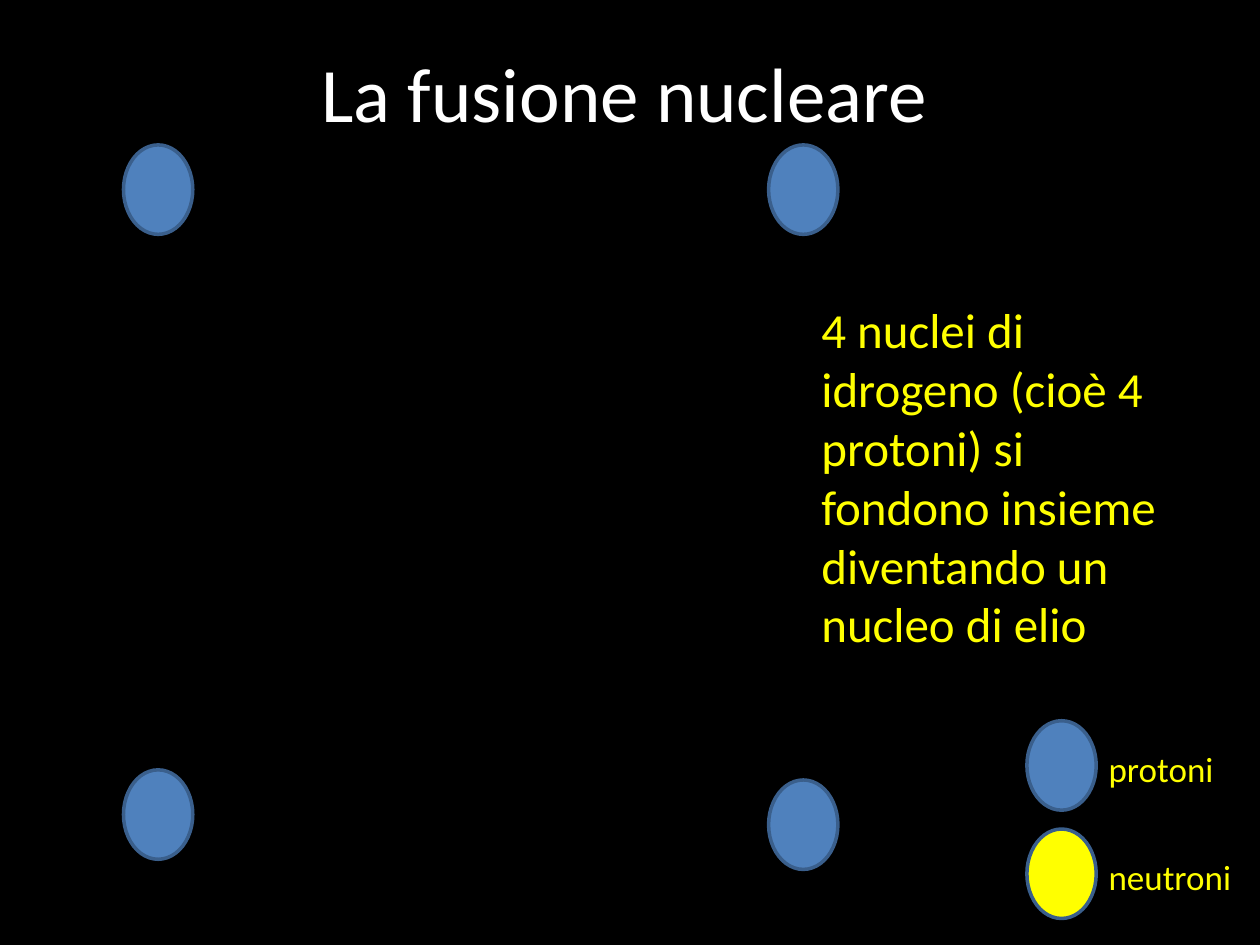
from pptx import Presentation
from pptx.dml.color import RGBColor
from pptx.enum.shapes import MSO_SHAPE
from pptx.enum.text import MSO_ANCHOR, PP_ALIGN
from pptx.util import Inches, Pt

COLORS = {
    "background": "000000",
    "title": "FFFFFF",
    "text": "FFFF00",
    "proton": "4F81BD",
    "neutron": "FFFF00",
    "outline": "3A5F8C",
}

prs = Presentation()
prs.slide_width, prs.slide_height = Inches(10), Inches(7.5)
s = prs.slides.add_slide(prs.slide_layouts[6])
s.background.fill.solid()
s.background.fill.fore_color.rgb = RGBColor.from_string(COLORS["background"])


def add_text(text, left, top, width, height, size, color="text"):
    """Add a one-run text box and return its text frame."""
    tf = s.shapes.add_textbox(
        Inches(left), Inches(top), Inches(width), Inches(height)).text_frame
    tf.word_wrap = True
    r = tf.paragraphs[0].add_run()
    r.text = text
    r.font.name = "Calibri"
    r.font.size = Pt(size)
    r.font.color.rgb = RGBColor.from_string(COLORS[color])
    return tf


def add_particle(kind, left, top):
    sp = s.shapes.add_shape(
        MSO_SHAPE.OVAL, Inches(left), Inches(top), Inches(0.55), Inches(0.71))
    sp.shadow.inherit = False
    sp.fill.solid()
    sp.fill.fore_color.rgb = RGBColor.from_string(COLORS[kind])
    sp.line.color.rgb = RGBColor.from_string(COLORS["outline"])
    sp.line.width = Pt(2)


title = add_text("La fusione nucleare", 0.5, 0.3, 8.91, 0.85, 44, "title")
title.vertical_anchor = MSO_ANCHOR.MIDDLE
title.paragraphs[0].alignment = PP_ALIGN.CENTER

# Four hydrogen nuclei, one near each corner
for left, bottom_top in [(0.98, 6.11), (6.1, 6.19)]:
    for top in (1.15, bottom_top):
        add_particle("proton", left, top)

add_text("4 nuclei di idrogeno (cioè 4 protoni) si fondono insieme "
         "diventando un nucleo di elio", 6.42, 2.33, 2.99, 2.93, 28)

# Legend
for kind, label, top, width in [("proton", "protoni", 5.72, 1.1),
                                ("neutron", "neutroni", 6.58, 1.3)]:
    add_particle(kind, 8.15, top)
    add_text(label, 8.7, top + 0.16, width, 0.44, 20)

prs.save("out.pptx")
